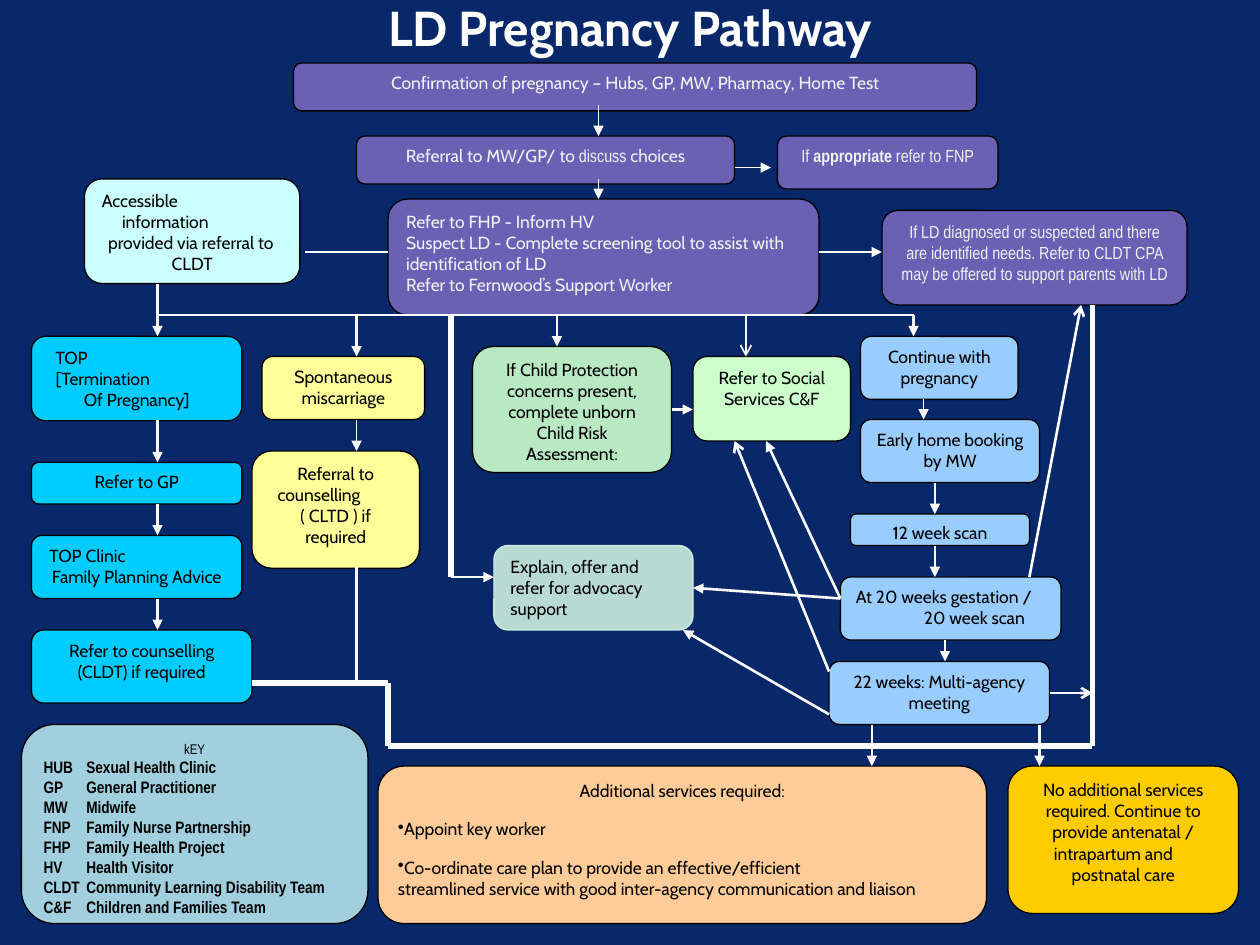
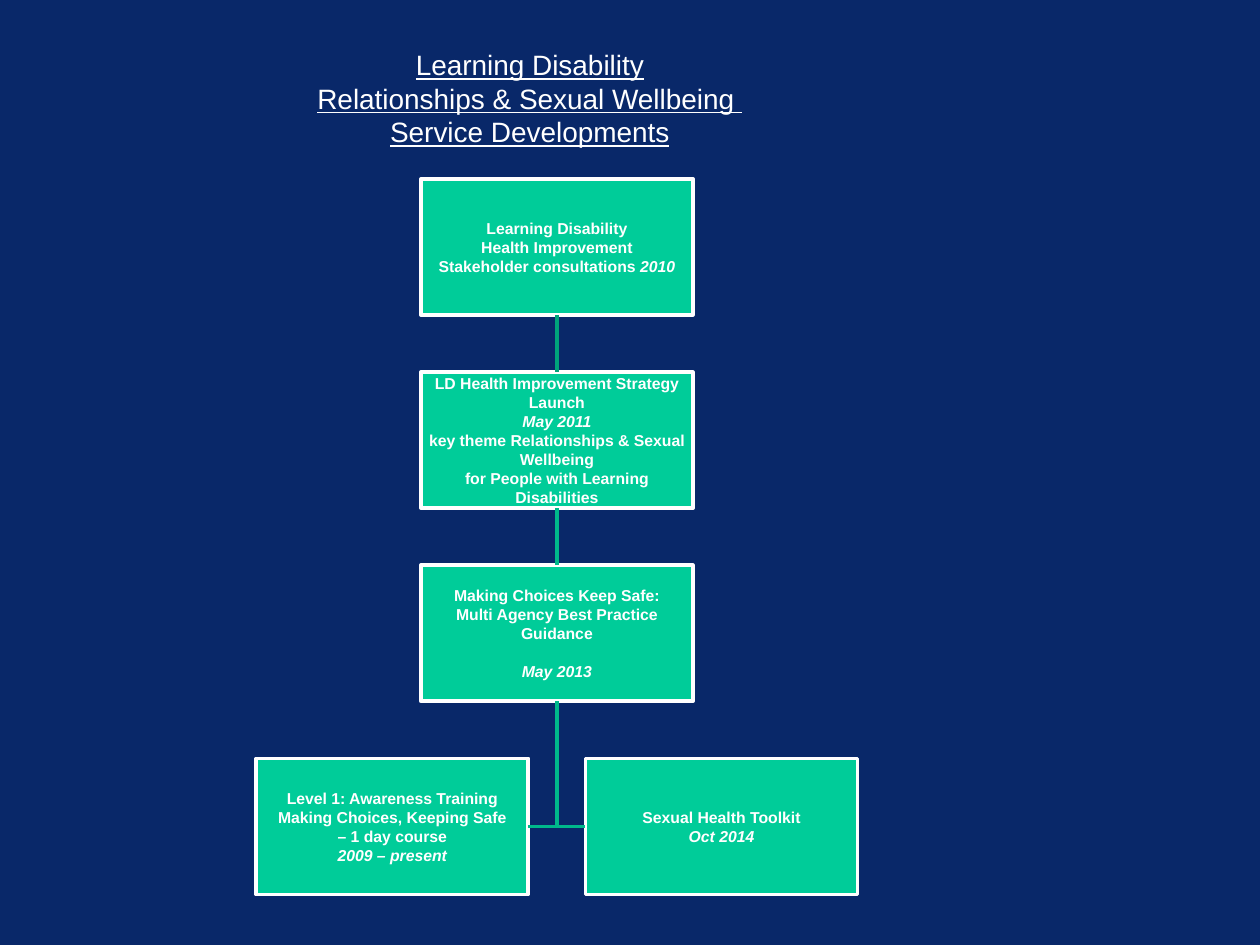
from dataclasses import dataclass

import pptx
import pptx.util
import pptx.dml.color
import pptx.enum.shapes
import pptx.enum.text
import pptx.oxml
import pptx.oxml.ns

Inches = pptx.util.Inches
Align = pptx.enum.text.PP_ALIGN
Anchor = pptx.enum.text.MSO_ANCHOR
Kind = pptx.enum.shapes.MSO_SHAPE
TOP, LEFT, BOTTOM, RIGHT = range(4)


@dataclass(frozen=True)
class Theme:
    background: str = "092869"
    white: str = "FFFFFF"
    black: str = "000000"
    pale: str = "F2F2F2"
    arrow: str = "F9F9F9"
    purple: str = "CC99FF"
    cyan: str = "00CCFF"
    ice: str = "CCFFFF"
    blue: str = "99CCFF"
    yellow: str = "FFFF99"
    green: str = "CCFFCC"
    mint: str = "CCEEDF"
    peach: str = "FFCC99"
    gold: str = "FFCC00"
    stage: str = "00CC99"
    stage_link: str = "00B98B"
    first_link: str = "00A37B"
    body_font: str = "Cabin"
    narrow_font: str = "Arial Narrow"
    plain_font: str = "Arial"
    title_size: float = 28
    heading_size: float = 16
    body_size: float = 10
    key_size: float = 9.5
    key_title_size: float = 8
    stage_size: float = 9


THEME = Theme()


def rgb(color):
    return pptx.dml.color.RGBColor.from_string(color)


def append_xml(parent, tag, **attributes):
    child = pptx.oxml.parse_xml(f"<a:{tag} {pptx.oxml.ns.nsdecls('a')}/>")
    for name, value in attributes.items():
        child.set(name, str(value))
    parent.append(child)
    return child


def add_text(frame, text, font=THEME.body_font, size=THEME.body_size, color=THEME.black,
             bold=False, italic=False, underline=False, align=Align.CENTER,
             indent=0, tab=None, bullet=None, before=None, after=None):
    """Add a paragraph; text is a string or a list of (string, run format) pairs."""
    paragraph = frame.paragraphs[0]
    if paragraph.runs:
        paragraph = frame.add_paragraph()
    paragraph.alignment = align
    properties = paragraph._p.get_or_add_pPr()
    if indent:
        properties.set("marL", str(Inches(indent)))
    if bullet:
        append_xml(properties, "buChar", char=bullet)
    if tab:
        append_xml(append_xml(properties, "tabLst"), "tab", pos=Inches(tab), algn="l")
    if before:
        paragraph.space_before = pptx.util.Pt(before)
    if after:
        paragraph.space_after = pptx.util.Pt(after)
    base = dict(font=font, size=size, color=color, bold=bold, italic=italic, underline=underline)
    for content, changes in [(text, {})] if isinstance(text, str) else text:
        style = {**base, **changes}
        for number, line in enumerate(content.split("\n")):
            if number:
                paragraph.add_line_break()
            run = paragraph.add_run()
            run.text = line
            run.font.name = style["font"]
            run.font.size = pptx.util.Pt(style["size"])
            run.font.color.rgb = rgb(style["color"])
            run.font.bold = style["bold"]
            run.font.italic = style["italic"]
            run.font.underline = style["underline"]


def fill_frame(frame, paragraphs, **common):
    """Each paragraph is text alone or a (text, format) pair."""
    frame.word_wrap = True
    for paragraph in paragraphs:
        text, changes = paragraph if isinstance(paragraph, tuple) else (paragraph, {})
        add_text(frame, text, **{**common, **changes})


def add_box(slide, place, fill, paragraphs, opacity=100, border=THEME.black, border_width=0.75,
            kind=Kind.ROUNDED_RECTANGLE, anchor=Anchor.TOP, inset=None, **text_format):
    box = slide.shapes.add_shape(kind, *map(Inches, place))
    box.shadow.inherit = False
    box.fill.solid()
    box.fill.fore_color.rgb = rgb(fill)
    if opacity < 100:
        color = box.fill._xPr.find(".//" + pptx.oxml.ns.qn("a:srgbClr"))
        append_xml(color, "alpha", val=opacity * 1000)
    box.line.color.rgb = rgb(border)
    box.line.width = pptx.util.Pt(border_width)
    frame = box.text_frame
    frame.vertical_anchor = anchor
    if inset is not None:
        frame.margin_left = frame.margin_right = Inches(inset)
        frame.margin_top = frame.margin_bottom = Inches(inset)
    fill_frame(frame, paragraphs, **text_format)
    return box


def add_text_box(slide, place, paragraphs, anchor=Anchor.TOP, **text_format):
    frame = slide.shapes.add_textbox(*map(Inches, place)).text_frame
    frame.vertical_anchor = anchor
    fill_frame(frame, paragraphs, **text_format)


def add_line(slide, start, end, color=THEME.arrow, width=1.5, head=None):
    """Draw a line; each end is an (x, y) point or a (shape, side) pair."""
    joins = [not isinstance(point[0], (int, float)) for point in (start, end)]
    points = [(0, 0) if joined else point for point, joined in zip((start, end), joins)]
    connector = slide.shapes.add_connector(
        pptx.enum.shapes.MSO_CONNECTOR.STRAIGHT, *(Inches(v) for point in points for v in point))
    if joins[0]:
        connector.begin_connect(*start)
    if joins[1]:
        connector.end_connect(*end)
    connector.line.color.rgb = rgb(color)
    connector.line.width = pptx.util.Pt(width)
    if head:
        append_xml(connector.line._get_or_add_ln(), "tailEnd", type=head)
    append_xml(connector._element.spPr, "effectLst")


def add_slide(presentation):
    slide = presentation.slides.add_slide(presentation.slide_layouts[6])
    slide.background.fill.solid()
    slide.background.fill.fore_color.rgb = rgb(THEME.background)
    return slide


def add_key(slide):
    entries = [("HUB", "Sexual Health Clinic"), ("GP", "General Practitioner"), ("MW", "Midwife"),
               ("FNP", "Family Nurse Partnership"), ("FHP", "Family Health Project"),
               ("HV", "Health Visitor"), ("CLDT", "Community Learning Disability Team"),
               ("C&F", "Children and Families Team")]
    heading = ("kEY", dict(size=THEME.key_title_size, bold=False, align=Align.CENTER))
    add_box(slide, (0.17, 5.75, 2.75, 1.58), THEME.ice,
            [heading] + ["\t".join(entry) for entry in entries], opacity=78,
            font=THEME.narrow_font, size=THEME.key_size, bold=True, align=Align.LEFT, tab=0.34)


def add_referral_boxes(slide):
    """The purple steps from confirmation of pregnancy to referral."""
    narrow = dict(font=THEME.narrow_font)
    left = dict(align=Align.LEFT)
    steps = [
        ((2.33, 0.5, 5.42, 0.38),
         ["Confirmation of pregnancy – Hubs, GP, MW, Pharmacy, Home Test"], {}),
        ((2.83, 1.08, 3, 0.38),
         [([("Referral to MW/GP/ to ", {}), ("discuss", narrow), (" choices", {})], {})], {}),
        ((3.08, 1.58, 3.42, 0.92),
         ["Refer to FHP - Inform HV",
          "Suspect LD - Complete screening tool to assist with identification of LD",
          "Refer to Fernwood’s Support Worker"], left),
        ((7, 1.67, 2.42, 0.75),
         ["If LD diagnosed or suspected and there are identified needs. "
          "Refer to CLDT CPA may be offered to support parents with LD"], narrow),
        ((6.17, 1.08, 1.75, 0.42),
         [([("If ", {}), ("appropriate", dict(bold=True)), (" refer to FNP", {})], {})], narrow),
    ]
    for place, paragraphs, text_format in steps:
        add_box(slide, place, THEME.purple, paragraphs, opacity=50, color=THEME.pale, **text_format)


def add_outcome_boxes(slide):
    """Draw the coloured steps and return those that lines are joined to."""
    def left(indent, **more):
        return dict(align=Align.LEFT, indent=indent, **more)

    steps = [
        (THEME.ice, (0.67, 1.42, 1.71, 0.83),
         [("Accessible", left(0)), ("information", left(0.16)),
          ("provided via referral to", left(0.05)), "CLDT"]),
        (THEME.cyan, (0.25, 2.67, 1.67, 0.67),
         [("TOP\t[Termination", left(0.06, tab=0.6)), "Of Pregnancy]"]),
        (THEME.cyan, (0.25, 3.67, 1.67, 0.33), ["Refer to GP"]),
        (THEME.cyan, (0.25, 4.25, 1.67, 0.5),
         [("TOP Clinic", left(0.02)), ("Family Planning Advice", left(0.04))]),
        (THEME.cyan, (0.25, 5, 1.75, 0.58), ["Refer to counselling (CLDT) if required"]),
        (THEME.yellow, (2.08, 2.83, 1.29, 0.5), ["Spontaneous miscarriage"]),
        (THEME.yellow, (2, 3.58, 1.33, 0.93),
         ["Referral to", ("counselling", left(0.06)), "( CLTD ) if", "required"]),
        (THEME.green, (5.5, 2.83, 1.25, 0.67), ["Refer to Social Services C&F"]),
        (THEME.blue, (6.83, 2.67, 1.25, 0.5), ["Continue with pregnancy"]),
        (THEME.blue, (6.83, 3.33, 1.42, 0.5), ["Early home booking by MW"]),
        (THEME.blue, (6.75, 4.08, 1.42, 0.25), ["12 week scan"]),
        (THEME.blue, (6.67, 4.58, 1.75, 0.5),
         [("At 20 weeks gestation /", left(0)), ("20 week scan", left(0.54))]),
        (THEME.gold, (8, 6.08, 1.83, 1.17),
         ["No additional services required. Continue to provide antenatal /",
          ("intrapartum and", left(0.21)), "postnatal care"]),
        (THEME.peach, (3, 6.08, 4.83, 1.25),
         [("Additional services required:", dict(after=10)),
          ("Appoint key worker", left(0, bullet="•", after=10)),
          ("Co-ordinate care plan to provide an effective/efficient\nstreamlined service "
           "with good inter-agency communication and liaison", left(0, bullet="•"))]),
    ]
    for fill, place, paragraphs in steps:
        add_box(slide, place, fill, paragraphs)
    meeting = add_box(slide, (6.58, 5.25, 1.75, 0.5), THEME.blue,
                      ["22 weeks: Multi-agency meeting"])
    child_risk = add_box(slide, (3.75, 2.75, 1.58, 1), THEME.green,
                         ["If Child Protection concerns present, complete unborn "
                          "Child Risk Assessment:"], opacity=90)
    advocacy = add_box(slide, (3.92, 4.33, 1.58, 0.67), THEME.mint,
                       ["Explain, offer and refer for advocacy support"],
                       opacity=90, border=THEME.mint, align=Align.LEFT)
    return meeting, child_risk, advocacy


def add_pathway_lines(slide, meeting, child_risk, advocacy):
    down_arrows = [  # x, top, bottom, width
        (4.75, 0.83, 1.08, 1), (4.75, 1.42, 1.58, 1), (4.42, 2.5, 2.75, 1),
        (7.33, 3.17, 3.33, 1), (7.42, 3.83, 4.08, 1), (7.42, 4.33, 4.58, 1),
        (7.5, 5.08, 5.25, 1), (2.83, 3.33, 3.58, 1), (2.83, 2.5, 2.83, 1.5),
        (7.25, 2.5, 2.67, 1.5), (6.92, 5.75, 6.08, 1.5), (8.25, 5.75, 6.08, 1.5),
        (1.25, 2.25, 2.67, 1.5), (1.25, 3.33, 3.67, 1.5), (1.25, 4, 4.25, 1.5),
        (1.25, 4.75, 5, 1.5),
    ]
    for x, top, bottom, width in down_arrows:
        add_line(slide, (x, top), (x, bottom), width=width, head="triangle")

    add_line(slide, (5.92, 2.5), (5.92, 2.83), width=1, head="arrow")
    add_line(slide, (5.83, 1.33), (6.12, 1.33), width=1, head="triangle")
    for start, end in [((6.5, 2), (7, 2)), ((child_risk, RIGHT), (5.5, 3.25)),
                       ((3.58, 4.58), (3.92, 4.58)), ((6.67, 4.75), (6.08, 3.5)),
                       ((6.67, 4.75), (advocacy, RIGHT)), ((6.58, 5.67), (5.42, 5))]:
        add_line(slide, start, end, head="triangle")
    for start, end in [((meeting, RIGHT), (8.67, 5.5)), ((8.17, 4.58), (8.58, 2.42)),
                       ((6.58, 5.33), (5.83, 3.5))]:
        add_line(slide, start, end, color=THEME.white, head="arrow")
    for start, end in [((2.42, 2), (3.08, 2)), ((1.25, 2.5), (7.25, 2.5)),
                       ((2.83, 4.5), (2.83, 5.4))]:
        add_line(slide, start, end, color=THEME.white)

    return_route = [(8.67, 2.42), (8.67, 5.92), (3.08, 5.92), (3.08, 5.42), (2, 5.42)]
    for start, end in [*zip(return_route, return_route[1:]), ((3.58, 4.58), (3.58, 2.5))]:
        add_line(slide, start, end, color=THEME.white, width=3)


def build_pathway(presentation):
    slide = add_slide(presentation)
    add_text_box(slide, (2, 0, 6, 0.42), ["LD Pregnancy Pathway"], anchor=Anchor.MIDDLE,
                 size=THEME.title_size, color=THEME.white, bold=True)
    add_key(slide)
    add_referral_boxes(slide)
    add_pathway_lines(slide, *add_outcome_boxes(slide))


def build_developments(presentation):
    slide = add_slide(presentation)
    add_text_box(slide, (0.33, 0.33, 7.75, 0.91),
                 ["Learning Disability", "Relationships & Sexual Wellbeing ",
                  "Service Developments"],
                 font=THEME.plain_font, size=THEME.heading_size, color=THEME.white, underline=True)

    width, height, gap = 2.16, 1.08, 0.453
    center, first_top = 4.42, 1.42
    italic = dict(italic=True)

    def add_stage(left, row, paragraphs):
        place = (left, first_top + row * (height + gap), width, height)
        return add_box(slide, place, THEME.stage, paragraphs, border=THEME.white, border_width=2,
                       kind=Kind.RECTANGLE, anchor=Anchor.MIDDLE, inset=0.01,
                       font=THEME.plain_font, size=THEME.stage_size, color=THEME.white, bold=True)

    trunk = [
        ["Learning Disability", "Health Improvement",
         ([("Stakeholder consultations ", {}), ("2010", italic)], {})],
        ["LD Health Improvement Strategy Launch", ("May 2011", italic),
         "key theme Relationships & Sexual Wellbeing", "for People with Learning Disabilities"],
        ["Making Choices Keep Safe:", "Multi Agency Best Practice Guidance",
         ("May 2013", dict(italic=True, before=11))],
    ]
    stages = [add_stage(center - width / 2, row, text) for row, text in enumerate(trunk)]
    training = add_stage(center - gap / 2 - width, 3,
                         ["Level 1: Awareness Training", "Making Choices, Keeping Safe",
                          "– 1 day course", ("2009 – present", italic)])
    toolkit = add_stage(center + gap / 2, 3, ["Sexual Health Toolkit", ("Oct 2014", italic)])

    branch = (center, first_top + 3 * (height + gap) + height / 2)
    for start, end, color in [
            ((stages[0], BOTTOM), (stages[1], TOP), THEME.first_link),
            ((stages[1], BOTTOM), (stages[2], TOP), THEME.stage_link),
            ((stages[2], BOTTOM), branch, THEME.stage_link),
            ((training, RIGHT), (toolkit, LEFT), THEME.stage_link)]:
        add_line(slide, start, end, color=color, width=2)


def main():
    presentation = pptx.Presentation()
    presentation.slide_width = Inches(10)
    presentation.slide_height = Inches(7.5)
    build_pathway(presentation)
    build_developments(presentation)
    presentation.save("out.pptx")


if __name__ == "__main__":
    main()
